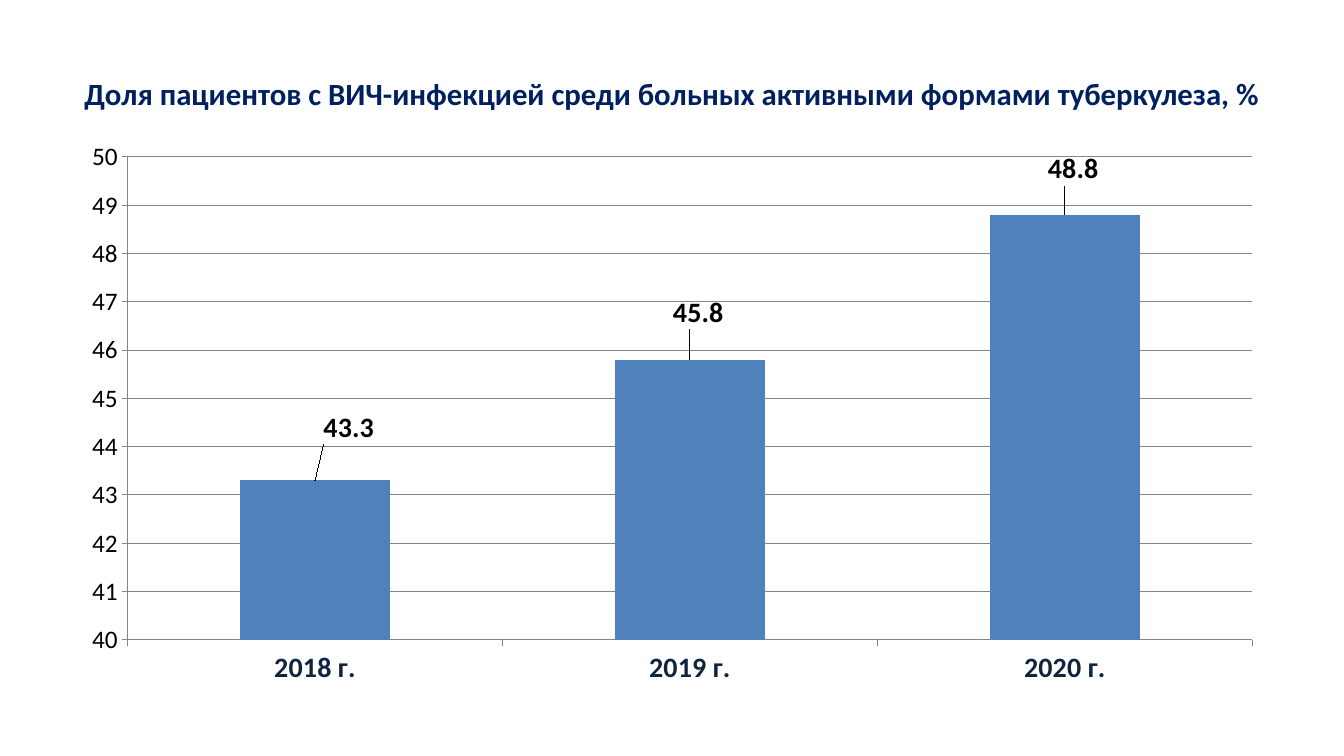
"""Build a slide with a column chart of HIV share among tuberculosis patients."""
from lxml import etree
from pptx import Presentation
from pptx.chart.data import CategoryChartData
from pptx.dml.color import RGBColor
from pptx.enum.chart import XL_CHART_TYPE, XL_LABEL_POSITION, XL_TICK_MARK
from pptx.enum.text import MSO_ANCHOR, PP_ALIGN
from pptx.oxml.ns import qn
from pptx.util import Cm, Pt

COLUMN_CLUSTERED = XL_CHART_TYPE.COLUMN_CLUSTERED
OUTSIDE_END = XL_LABEL_POSITION.OUTSIDE_END
TICK_OUTSIDE = XL_TICK_MARK.OUTSIDE
TICK_NONE = XL_TICK_MARK.NONE
MIDDLE = MSO_ANCHOR.MIDDLE
CENTER = PP_ALIGN.CENTER

NAVY = RGBColor(0x00, 0x20, 0x60)
DARK_BLUE = RGBColor(0x0F, 0x24, 0x3E)
BAR_BLUE = RGBColor(0x4F, 0x81, 0xBD)
GREY = RGBColor(0x86, 0x86, 0x86)
BLACK = RGBColor(0x00, 0x00, 0x00)
FONT = "Calibri"


def format_font(font, size, color, bold):
    font.name = FONT
    font.size = Pt(size)
    font.bold = bold
    font.color.rgb = color


def insert_layout(parent, index, settings):
    layout = etree.Element(qn("c:layout"))
    manual = etree.SubElement(layout, qn("c:manualLayout"))
    for name, value in settings.items():
        etree.SubElement(manual, qn(f"c:{name}")).set("val", str(value))
    parent.insert(index, layout)


presentation = Presentation()
presentation.slide_width = Cm(33.87)
presentation.slide_height = Cm(19.05)
slide = presentation.slides.add_slide(presentation.slide_layouts[5])

title = slide.shapes.title
title.left, title.top = Cm(1.69), Cm(0.76)
title.width, title.height = Cm(30.48), Cm(3.18)
title.text_frame.vertical_anchor = MIDDLE
title.text_frame.word_wrap = True
paragraph = title.text_frame.paragraphs[0]
paragraph.text = "Доля пациентов с ВИЧ-инфекцией среди больных активными формами туберкулеза, %"
paragraph.alignment = CENTER
format_font(paragraph.font, 22, NAVY, True)

chart_data = CategoryChartData()
chart_data.categories = ["2018 г.", "2019 г.", "2020 г."]
chart_data.add_series("Series 1", [43.3, 45.8, 48.8])
chart = slide.shapes.add_chart(
    COLUMN_CLUSTERED, Cm(1.69), Cm(3.3), Cm(30.48), Cm(14.22), chart_data
).chart
chart.has_title = False
chart.has_legend = False
format_font(chart.font, 18, BLACK, False)
plot_area = chart._chartSpace.find(f".//{qn('c:plotArea')}")
insert_layout(plot_area, 0, {
    "layoutTarget": "inner", "xMode": "edge", "yMode": "edge",
    "x": 0.05, "y": 0.046, "w": 0.93, "h": 0.856,
})

value_axis = chart.value_axis
value_axis.minimum_scale = 40
value_axis.maximum_scale = 50
value_axis.major_unit = 1
value_axis.has_major_gridlines = True
for axis in (chart.category_axis, value_axis):
    axis.major_tick_mark = TICK_OUTSIDE
    axis.minor_tick_mark = TICK_NONE
for line in (chart.category_axis.format.line, value_axis.format.line,
             value_axis.major_gridlines.format.line):
    line.color.rgb = GREY
    line.width = Pt(0.75)
format_font(chart.category_axis.tick_labels.font, 20, DARK_BLUE, True)

plot = chart.plots[0]
plot.gap_width = 150
plot.vary_by_categories = False
series = plot.series[0]
series.format.fill.solid()
series.format.fill.fore_color.rgb = BAR_BLUE
series.data_labels.show_value = True
format_font(series.data_labels.font, 20, BLACK, True)

label_offsets = [(0.028, -0.057), (0.007, -0.046), (0.007, -0.044)]
for index in range(len(label_offsets)):
    label = series.points[index].data_label
    label.position = OUTSIDE_END
    format_font(label.font, 20, BLACK, True)
for element, (x, y) in zip(series._element.xpath("c:dLbls/c:dLbl"), label_offsets):
    insert_layout(element, 1, {"x": x, "y": y})

presentation.save("out.pptx")
